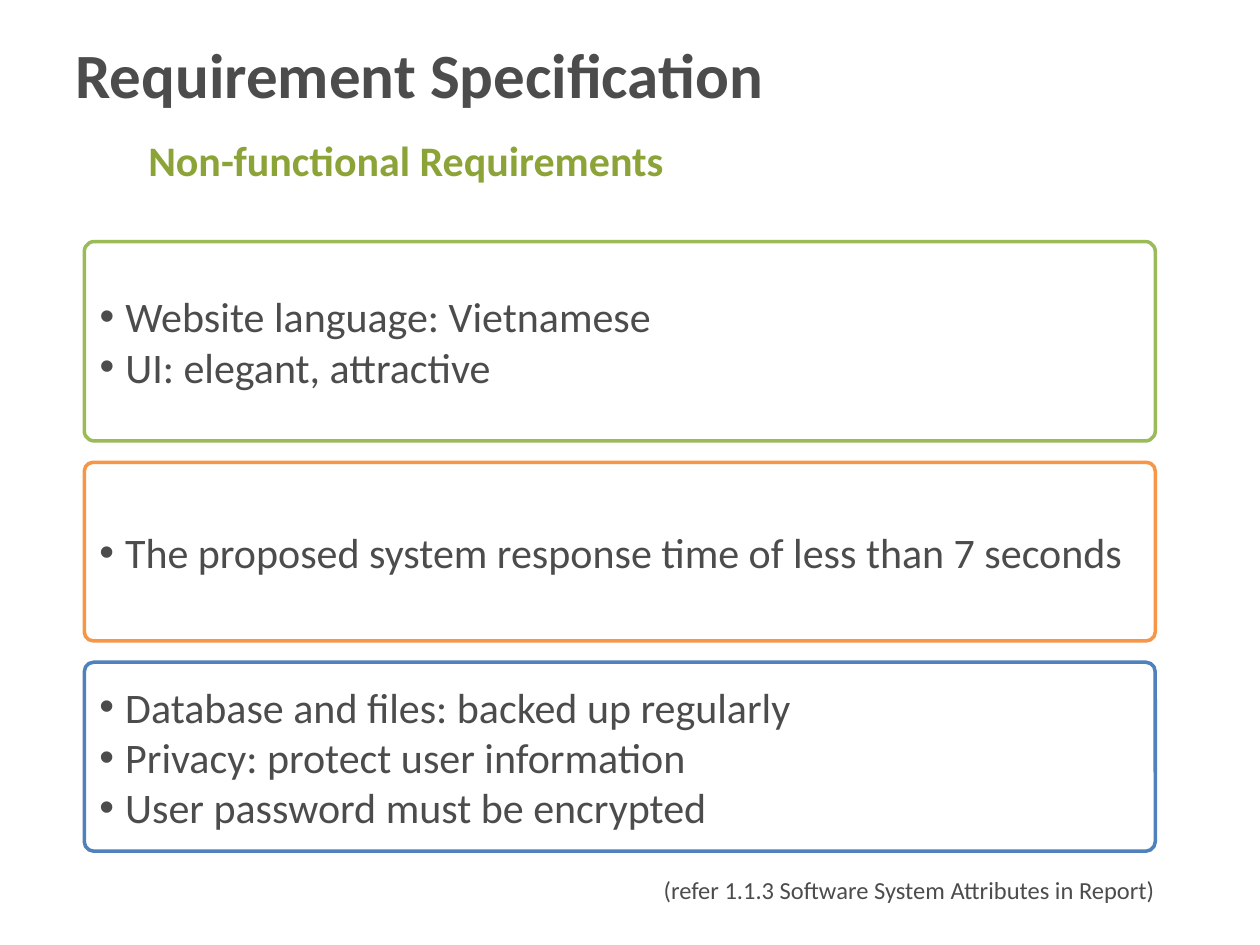
"""Build the non-functional requirements slide."""
from dataclasses import dataclass

from lxml.etree import SubElement
from pptx import Presentation
from pptx.dml.color import RGBColor
from pptx.enum.shapes import MSO_SHAPE
from pptx.enum.text import MSO_ANCHOR, PP_ALIGN
from pptx.oxml.ns import qn
from pptx.util import Cm, Pt


@dataclass(frozen=True)
class Theme:
    font: str = "Calibri"
    ink: str = "4C4C4C"
    accent: str = "8CA338"
    paper: str = "FFFFFF"
    green: str = "9BBB59"
    orange: str = "F79646"
    blue: str = "4F81BD"
    title: int = 36
    body: int = 24
    note: int = 14
    border: int = 2


THEME = Theme()
LEFT, WIDTH, GAP = 1.7, 21.59, 0.43
INDENT = 0.52
PANELS = [
    (4.02, THEME.green, ["Website language: Vietnamese", "UI: elegant, attractive"]),
    (3.6, THEME.orange, ["The proposed system response time of less than 7 seconds"]),
    (3.81, THEME.blue, ["Database and files: backed up regularly",
                        "Privacy: protect user information",
                        "User password must be encrypted"]),
]


def style(para, size, color, bold=False):
    para.alignment = PP_ALIGN.LEFT
    for run in para.runs:
        font = run.font
        font.name, font.size, font.bold = THEME.font, Pt(size), bold
        font.color.rgb = RGBColor.from_string(color)


def frame_of(shape):
    frame = shape.text_frame
    frame.word_wrap = True
    frame.vertical_anchor = MSO_ANCHOR.MIDDLE
    return frame


def add_label(slide, box, text, size, color=THEME.ink, bold=False, inset=0.25):
    frame = frame_of(slide.shapes.add_textbox(*map(Cm, box)))
    frame.margin_left = Cm(inset)
    frame.text = text
    style(frame.paragraphs[0], size, color, bold)


def add_bullet(para):
    props = para._p.get_or_add_pPr()
    props.set("marL", str(Cm(INDENT)))
    props.set("indent", str(-Cm(INDENT)))
    SubElement(props, qn("a:buFont"), typeface="Arial")
    SubElement(props, qn("a:buChar"), char="•")


def add_panel(slide, top, height, color, items):
    panel = slide.shapes.add_shape(
        MSO_SHAPE.ROUNDED_RECTANGLE, Cm(LEFT), Cm(top), Cm(WIDTH), Cm(height))
    panel.adjustments[0] = 0.05
    panel.shadow.inherit = False
    panel.fill.solid()
    panel.fill.fore_color.rgb = RGBColor.from_string(THEME.paper)
    panel.line.color.rgb = RGBColor.from_string(color)
    panel.line.width = Pt(THEME.border)
    frame = frame_of(panel)
    frame.text = "\n".join(items)
    for para in frame.paragraphs:
        style(para, THEME.body, THEME.ink)
        add_bullet(para)


def main():
    deck = Presentation()
    deck.slide_width, deck.slide_height = Cm(25.4), Cm(19.05)
    slide = deck.slides.add_slide(deck.slide_layouts[6])
    add_label(slide, (1.27, 0.43, 22.86, 2.11), "Requirement Specification",
              THEME.title, bold=True)
    add_label(slide, (0.2, 2.54, 15.88, 1.35), "Non-functional Requirements",
              THEME.body, THEME.accent, bold=True, inset=2.79)
    top = 4.87
    for height, color, items in PANELS:
        add_panel(slide, top, height, color, items)
        top += height + GAP
    add_label(slide, (13.13, 17.27, 12.5, 1.35),
              "(refer 1.1.3 Software System Attributes in Report)", THEME.note)
    deck.save("out.pptx")


if __name__ == "__main__":
    main()
